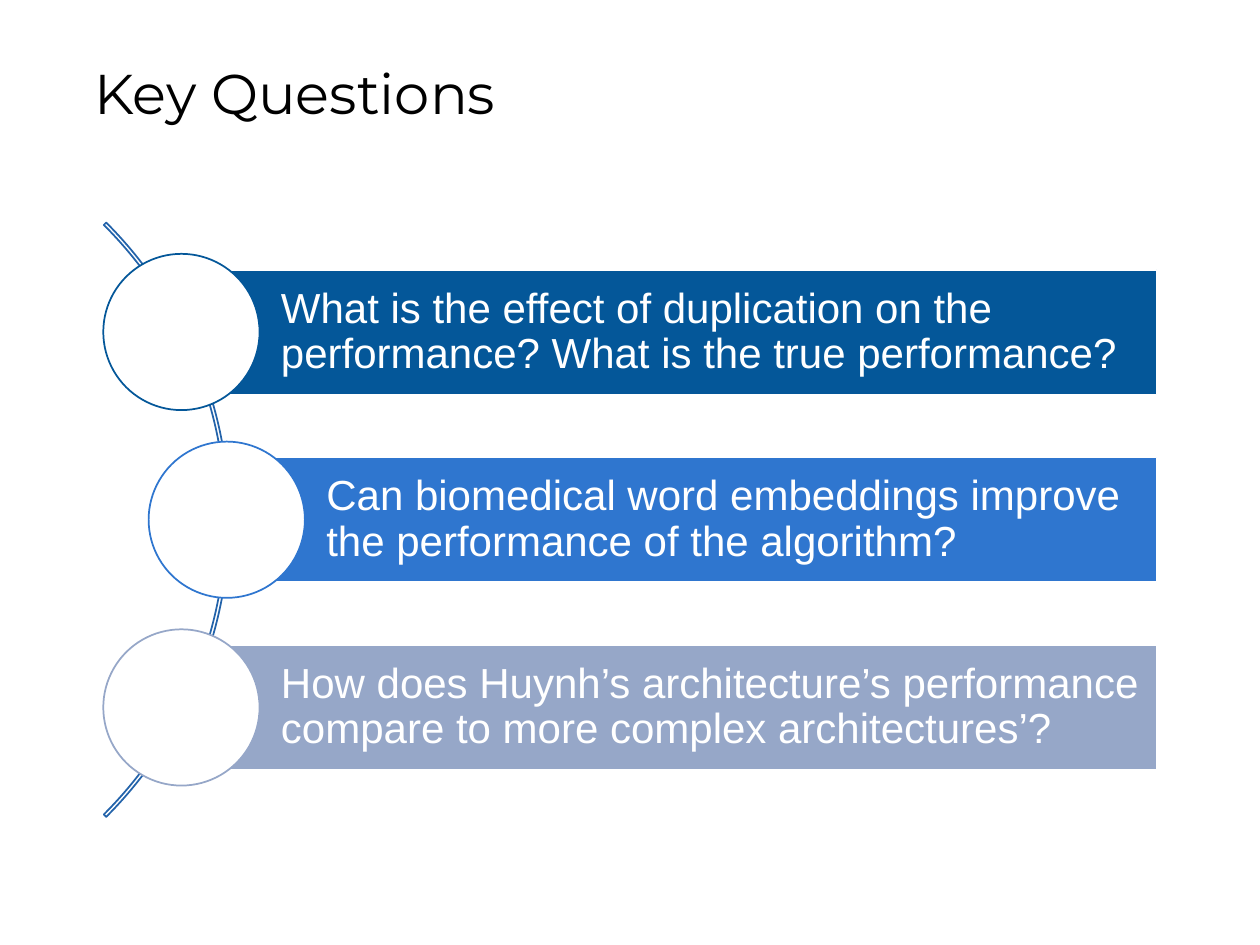
from dataclasses import dataclass

from pptx import Presentation
from pptx.dml.color import RGBColor
from pptx.enum.shapes import MSO_SHAPE
from pptx.enum.text import MSO_ANCHOR, MSO_AUTO_SIZE, PP_ALIGN
from pptx.util import Inches, Pt


@dataclass(frozen=True)
class Theme:
    black: RGBColor = RGBColor.from_string("000000")
    white: RGBColor = RGBColor.from_string("FFFFFF")
    arc: RGBColor = RGBColor.from_string("2363AA")
    navy: RGBColor = RGBColor.from_string("045799")
    blue: RGBColor = RGBColor.from_string("2F76CF")
    lavender: RGBColor = RGBColor.from_string("96A7C8")
    title_font: str = "Montserrat"
    body_font: str = "Arial"
    title_size: Pt = Pt(32)
    body_size: Pt = Pt(24)
    line_width: Pt = Pt(1)


theme = Theme()


def add_outlined_shape(shapes, preset, left, top, width, height, fill, line):
    shape = shapes.add_shape(preset, Inches(left), Inches(top), Inches(width), Inches(height))
    shape.shadow.inherit = False
    if fill is None:
        shape.fill.background()
    else:
        shape.fill.solid()
        shape.fill.fore_color.rgb = fill
    shape.line.color.rgb = line
    shape.line.width = theme.line_width
    return shape


def write_text(shape, text, font_name, size, color, line_spacing):
    frame = shape.text_frame
    frame.word_wrap = True
    frame.auto_size = MSO_AUTO_SIZE.NONE
    paragraph = frame.paragraphs[0]
    paragraph.text = text
    paragraph.alignment = PP_ALIGN.LEFT
    paragraph.line_spacing = line_spacing
    paragraph.font.name = font_name
    paragraph.font.size = size
    paragraph.font.color.rgb = color
    return frame


presentation = Presentation()
presentation.slide_width = Inches(10)
presentation.slide_height = Inches(7.5)
slide = presentation.slides.add_slide(presentation.slide_layouts[5])

title = slide.shapes.title
title.left, title.top = Inches(0.75), Inches(0.5)
title.width, title.height = Inches(8.5), Inches(1.05)
title_frame = write_text(
    title, "Key Questions", theme.title_font, theme.title_size, theme.black, 0.95
)
title_frame.vertical_anchor = MSO_ANCHOR.TOP
title_frame.margin_left = title_frame.margin_right = 0
title_frame.margin_top = title_frame.margin_bottom = 0

diagram = slide.shapes.add_group_shape()
arc = add_outlined_shape(
    diagram.shapes, MSO_SHAPE.BLOCK_ARC, -4.85, 0.79, 6.67, 6.67, None, theme.arc
)
for index, adjustment in enumerate((189, 27, 0.004)):
    arc.adjustments[index] = adjustment

questions = [
    (1.44, theme.navy,
     "What is the effect of duplication on the performance? What is the true performance?"),
    (1.8, theme.blue,
     "Can biomedical word embeddings improve the performance of the algorithm?"),
    (1.44, theme.lavender,
     "How does Huynh’s architecture’s performance compare to more complex architectures’?"),
]
bar_right, bar_height = 9.18, 0.99
first_top, row_pitch = 2.14, 1.49
circle_size = 1.24

for row, (left, color, question) in enumerate(questions):
    top = first_top + row * row_pitch
    bar = add_outlined_shape(
        diagram.shapes, MSO_SHAPE.RECTANGLE,
        left, top, bar_right - left, bar_height, color, theme.white,
    )
    frame = write_text(
        bar, question, theme.body_font, theme.body_size, theme.white, 0.9
    )
    frame.vertical_anchor = MSO_ANCHOR.MIDDLE
    frame.margin_left = Inches(0.79)
    frame.margin_top = frame.margin_right = frame.margin_bottom = Inches(0.07)
    add_outlined_shape(
        diagram.shapes, MSO_SHAPE.OVAL,
        left - circle_size / 2, top + (bar_height - circle_size) / 2,
        circle_size, circle_size, theme.white, color,
    )

presentation.save("out.pptx")
